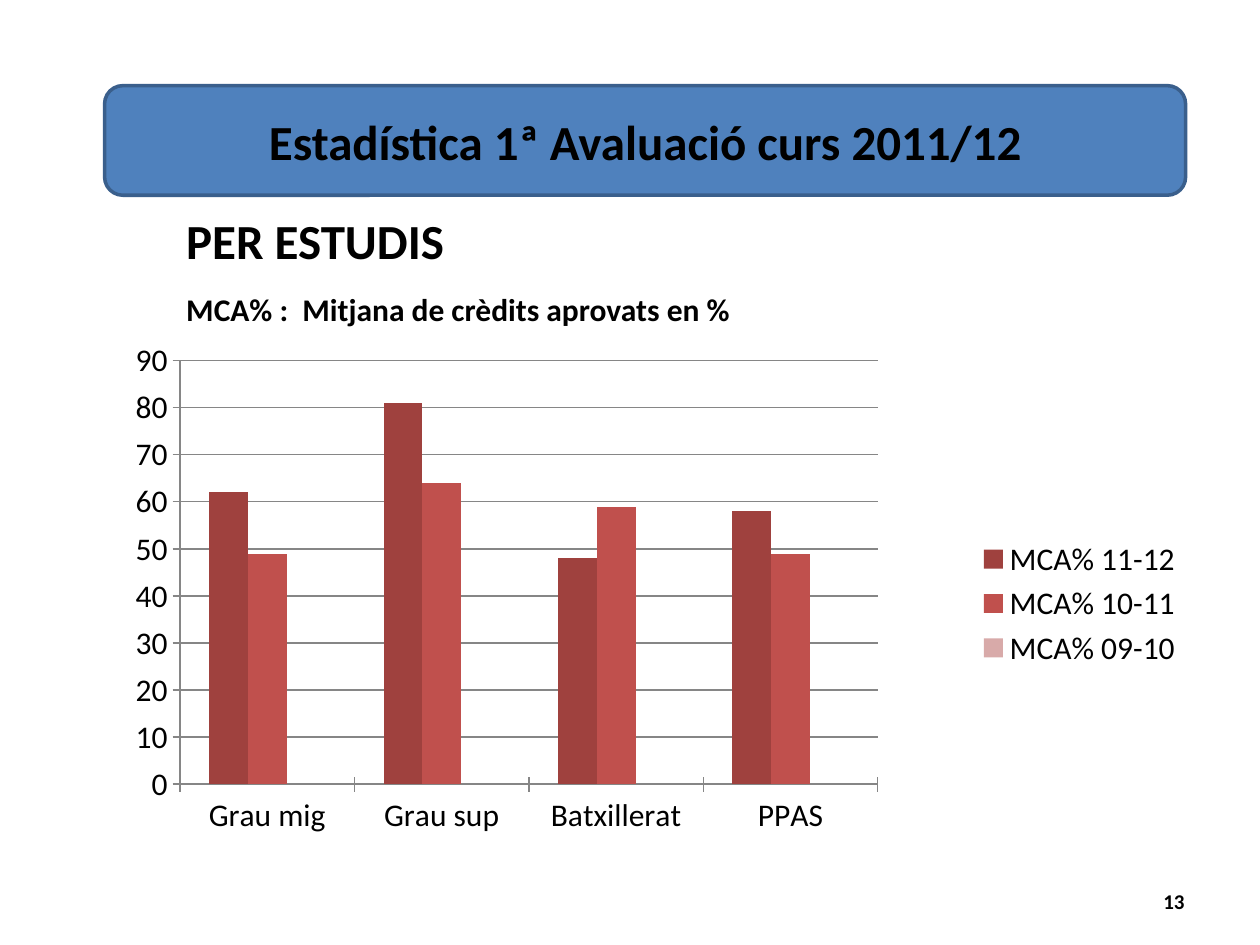
from lxml import etree
from pptx import Presentation
from pptx.chart.data import CategoryChartData
from pptx.dml.color import RGBColor
from pptx.enum.chart import XL_CHART_TYPE, XL_LEGEND_POSITION, XL_TICK_MARK
from pptx.enum.shapes import MSO_SHAPE
from pptx.enum.text import MSO_ANCHOR, PP_ALIGN
from pptx.oxml.ns import qn
from pptx.util import Inches, Pt

COLUMN = XL_CHART_TYPE.COLUMN_CLUSTERED
LEGEND_RIGHT = XL_LEGEND_POSITION.RIGHT
TICK_CROSS = XL_TICK_MARK.CROSS
ROUNDED = MSO_SHAPE.ROUNDED_RECTANGLE
LEFT, CENTER, RIGHT = PP_ALIGN.LEFT, PP_ALIGN.CENTER, PP_ALIGN.RIGHT
TOP, MIDDLE = MSO_ANCHOR.TOP, MSO_ANCHOR.MIDDLE

FONT = "Calibri"
COLORS = {
    "text": "000000",
    "banner": "4F81BD",
    "banner_line": "3A5F8C",
    "axis": "868686",
}
CATEGORIES = ["Grau mig", "Grau sup", "Batxillerat", "PPAS"]
SERIES = [
    ("MCA% 11-12", [62, 81, 48, 58], "9F413E"),
    ("MCA% 10-11", [49, 64, 59, 49], "C0504D"),
    ("MCA% 09-10", [None] * 4, "D8AAA9"),
]
PLOT_AREA = {"x": 0.086, "y": 0.066, "w": 0.628, "h": 0.757}


def color(name):
    return RGBColor.from_string(COLORS[name])


def format_font(font, size, bold):
    values = {"name": FONT, "size": Pt(size), "bold": bold}
    for attribute, value in values.items():
        setattr(font, attribute, value)
    font.color.rgb = color("text")


def write_text(shape, text, size, align=LEFT, anchor=TOP, wrap=True):
    frame = shape.text_frame
    frame.word_wrap = wrap
    frame.vertical_anchor = anchor
    paragraph = frame.paragraphs[0]
    paragraph.alignment = align
    run = paragraph.add_run()
    run.text = text
    format_font(run.font, size, True)


def add_label(slide, box, text, size, **options):
    shape = slide.shapes.add_textbox(*map(Inches, box))
    write_text(shape, text, size, **options)


def add_banner(slide, box, text):
    left, top, width, height = map(Inches, box)
    banner = slide.shapes.add_shape(ROUNDED, left, top, width, height)
    banner.shadow.inherit = False
    banner.fill.solid()
    banner.fill.fore_color.rgb = color("banner")
    banner.line.color.rgb = color("banner_line")
    banner.line.width = Pt(2)

    # The title lies on the banner, so it goes in front of it
    title = slide.shapes.title
    title.left, title.top, title.width, title.height = left, top, width, height
    write_text(title, text, 28, align=CENTER, anchor=MIDDLE)
    banner._element.addnext(title._element)


def set_plot_area(chart):
    plot_area = chart._chartSpace.chart.plotArea
    layout = plot_area.find(qn("c:layout"))
    if layout is None:
        layout = etree.Element(qn("c:layout"))
        plot_area.insert(0, layout)
    manual = etree.SubElement(layout, qn("c:manualLayout"))
    settings = {"layoutTarget": "inner", "xMode": "edge", "yMode": "edge", **PLOT_AREA}
    for tag, value in settings.items():
        etree.SubElement(manual, qn(f"c:{tag}")).set("val", str(value))


def add_credit_chart(slide, box):
    data = CategoryChartData()
    data.categories = CATEGORIES
    for name, values, _ in SERIES:
        data.add_series(name, values)
    chart = slide.shapes.add_chart(COLUMN, *map(Inches, box), data).chart
    chart.has_title = False
    format_font(chart.font, 18, False)
    set_plot_area(chart)

    # Columns
    plot = chart.plots[0]
    plot.vary_by_categories = False
    plot.gap_width = 150
    plot.overlap = 0
    for series, (_, _, fill) in zip(plot.series, SERIES):
        series.format.fill.solid()
        series.format.fill.fore_color.rgb = RGBColor.from_string(fill)

    # Axes and gridlines
    value_axis = chart.value_axis
    value_axis.minimum_scale, value_axis.maximum_scale = 0, 90
    value_axis.major_unit = 10
    value_axis.has_major_gridlines = True
    for axis in (chart.category_axis, value_axis):
        axis.major_tick_mark = TICK_CROSS
    for part in (chart.category_axis, value_axis, value_axis.major_gridlines):
        part.format.line.color.rgb = color("axis")
        part.format.line.width = Pt(0.75)

    # Legend
    chart.has_legend = True
    chart.legend.position = LEGEND_RIGHT
    chart.legend.include_in_layout = False


def main():
    presentation = Presentation()
    presentation.slide_width = Inches(10)
    presentation.slide_height = Inches(7.5)
    slide = presentation.slides.add_slide(presentation.slide_layouts[5])

    add_credit_chart(slide, (0.67, 2.57, 8.82, 4.44))
    add_label(slide, (1.38, 2.25, 4.56, 0.4),
              "MCA% :  Mitjana de crèdits aprovats en %", 18, wrap=False)
    add_label(slide, (1.38, 1.62, 2.27, 0.57), "PER ESTUDIS", 28, wrap=False)
    add_label(slide, (7.17, 6.95, 2.33, 0.4), "13", 12, align=RIGHT, anchor=MIDDLE)
    add_banner(slide, (0.83, 0.68, 8.58, 0.87), "Estadística 1ª Avaluació curs 2011/12")

    presentation.save("out.pptx")


if __name__ == "__main__":
    main()
